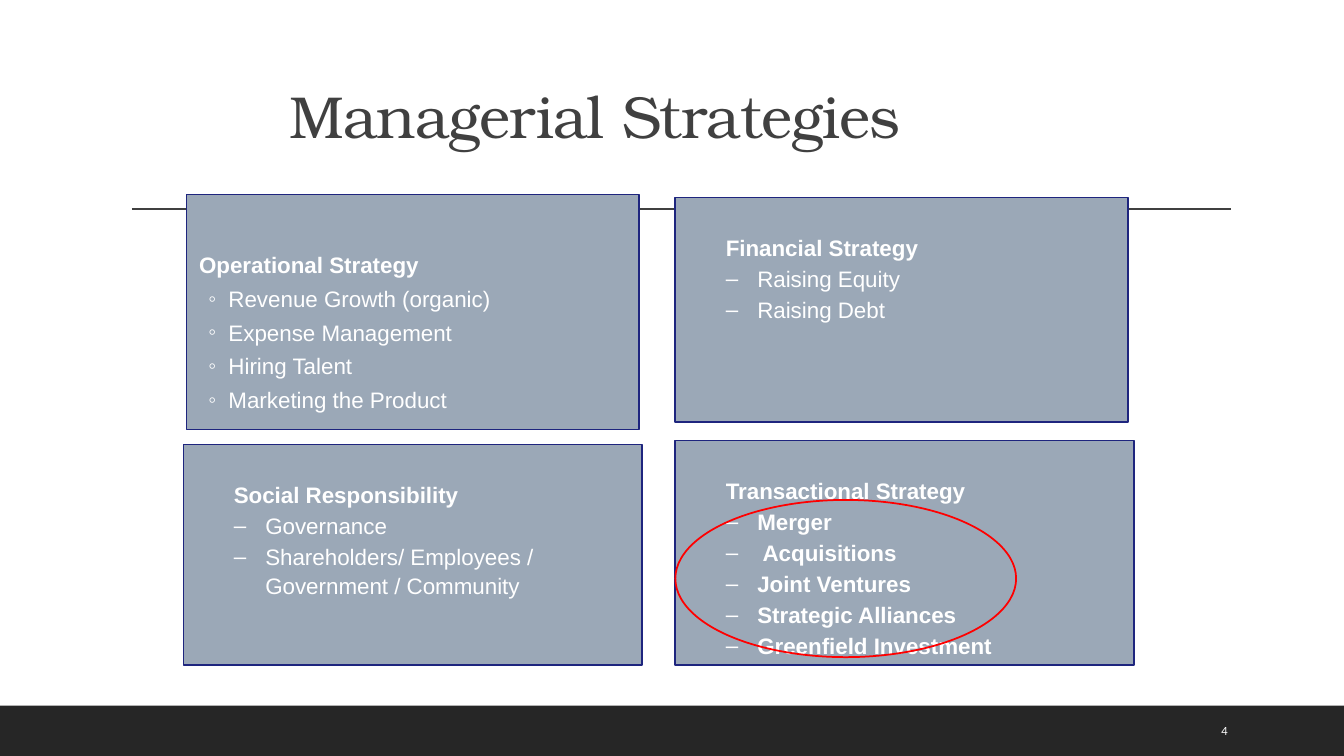
from dataclasses import dataclass

from lxml.etree import SubElement
from pptx import Presentation
from pptx.dml.color import RGBColor
from pptx.enum.shapes import MSO_CONNECTOR, MSO_SHAPE
from pptx.enum.text import MSO_ANCHOR, MSO_AUTO_SIZE, PP_ALIGN
from pptx.oxml.ns import qn
from pptx.util import Pt


@dataclass(frozen=True)
class Theme:
    ink: RGBColor = RGBColor(0x40, 0x40, 0x40)
    footer: RGBColor = RGBColor(0x26, 0x26, 0x26)
    card: RGBColor = RGBColor(0x9B, 0xA8, 0xB7)
    border: RGBColor = RGBColor(0x1E, 0x25, 0x7E)
    highlight: RGBColor = RGBColor(0xFF, 0, 0)
    white: RGBColor = RGBColor(0xFF, 0xFF, 0xFF)
    title_font: str = "TeX Gyre Bonum"
    body_font: str = "Arial"
    number_font: str = "Lato"
    title_size: float = 42.3
    body_size: float = 16
    number_size: float = 8
    outline: float = 1.25


@dataclass(frozen=True)
class ListStyle:
    """Spacing of a card's text, in points."""
    top: float
    heading_left: float
    text_left: float
    hanging: float
    before: float
    bullet: str


THEME = Theme()
DASHED = ListStyle(25.5, 36, 58.5, 22.5, 0, "–")
RINGED = ListStyle(39.5, 9, 30, 14.4, 2, "◦")

# Box (left, top, width, height), heading, items, list style, bold items
CARDS = [
    ((133.2, 139, 323.3, 167.8), "Operational Strategy",
     ["Revenue Growth (organic)", "Expense Management", "Hiring Talent",
      "Marketing the Product"], RINGED, False),
    ((482.4, 314.6, 327.6, 160.6), "Transactional Strategy",
     ["Merger", " Acquisitions", "Joint Ventures", "Strategic Alliances",
      "Greenfield Investment"], DASHED, True),
    ((131, 317.5, 327.6, 157.7), "Social Responsibility",
     ["Governance", "Shareholders/ Employees / Government / Community"],
     DASHED, False),
    ((482.4, 141.1, 323.3, 160.6), "Financial Strategy",
     ["Raising Equity", "Raising Debt"], DASHED, False),
]


def apply(target, values):
    for name, value in values.items():
        setattr(target, name, value)


def write(paragraph, text, font, size, color, bold=False):
    run = paragraph.add_run()
    run.text = text
    apply(run.font, {"name": font, "size": Pt(size), "bold": bold})
    run.font.color.rgb = color
    return run


def add_outlined(slide, kind, box, fill=None, line=None):
    """Add a flat preset shape; a missing fill or line is left empty."""
    shape = slide.shapes.add_shape(kind, *map(Pt, box))
    shape.shadow.inherit = False
    if fill is None:
        shape.fill.background()
    else:
        shape.fill.solid()
        shape.fill.fore_color.rgb = fill
    if line is None:
        shape.line.fill.background()
    else:
        shape.line.color.rgb = line
        shape.line.width = Pt(THEME.outline)
    return shape


def add_rule(slide, left, right, y):
    rule = slide.shapes.add_connector(
        MSO_CONNECTOR.STRAIGHT, Pt(left), Pt(y), Pt(right), Pt(y))
    rule.line.color.rgb = THEME.ink
    rule.line.width = Pt(1)
    SubElement(rule._element.spPr, qn("a:effectLst"))


def set_title(slide, text):
    title = slide.shapes.title
    apply(title, {"left": Pt(72.7), "top": Pt(64.8),
                  "width": Pt(704.9), "height": Pt(46.8)})
    apply(title.text_frame, {"vertical_anchor": MSO_ANCHOR.BOTTOM,
                             "auto_size": MSO_AUTO_SIZE.NONE,
                             "word_wrap": True})
    heading = title.text_frame.paragraphs[0]
    apply(heading, {"alignment": PP_ALIGN.CENTER, "line_spacing": 0.9})
    run = write(heading, text, THEME.title_font, THEME.title_size, THEME.ink)
    run.font._element.set("spc", "-50")


def indent(paragraph, left, hanging=0, bullet=None):
    properties = paragraph._p.get_or_add_pPr()
    properties.set("marL", str(Pt(left)))
    properties.set("indent", str(Pt(-hanging)))
    if bullet:
        SubElement(properties, qn("a:buFont"), typeface=THEME.body_font)
        SubElement(properties, qn("a:buChar"), char=bullet)


def add_card(slide, box, heading, items, style, bold_items):
    card = add_outlined(slide, MSO_SHAPE.RECTANGLE, box,
                        THEME.card, THEME.border)
    frame = card.text_frame
    apply(frame, {"margin_left": 0, "margin_right": 0, "margin_bottom": 0,
                  "margin_top": Pt(style.top), "word_wrap": True,
                  "vertical_anchor": MSO_ANCHOR.TOP})
    for index, text in enumerate([heading, *items]):
        paragraph = frame.add_paragraph() if index else frame.paragraphs[0]
        apply(paragraph, {"alignment": PP_ALIGN.LEFT, "line_spacing": 1.05,
                          "space_before": Pt(style.before if index else 0),
                          "space_after": Pt(2)})
        if index:
            indent(paragraph, style.text_left, style.hanging, style.bullet)
        else:
            indent(paragraph, style.heading_left)
        write(paragraph, text, THEME.body_font, THEME.body_size, THEME.white,
              bold_items or index == 0)


def add_slide_number(slide, number):
    label = slide.shapes.add_textbox(Pt(865.4), Pt(507.6), Pt(61.2), Pt(28.8))
    apply(label.text_frame, {"vertical_anchor": MSO_ANCHOR.MIDDLE,
                             "word_wrap": True})
    write(label.text_frame.paragraphs[0], number, THEME.number_font,
          THEME.number_size, THEME.white)


def main():
    deck = Presentation()
    apply(deck, {"slide_width": Pt(960), "slide_height": Pt(540)})
    slide = deck.slides.add_slide(deck.slide_layouts.get_by_name("Title Only"))
    add_outlined(slide, MSO_SHAPE.RECTANGLE, (0, 504, 960, 36), THEME.footer)
    add_rule(slide, 94.3, 879, 149.4)
    set_title(slide, "Managerial Strategies")
    for card in CARDS:
        add_card(slide, *card)
    add_slide_number(slide, "4")
    add_outlined(slide, MSO_SHAPE.OVAL, (482.4, 357.1, 243.4, 112.3),
                 line=THEME.highlight)
    deck.save("out.pptx")


if __name__ == "__main__":
    main()
